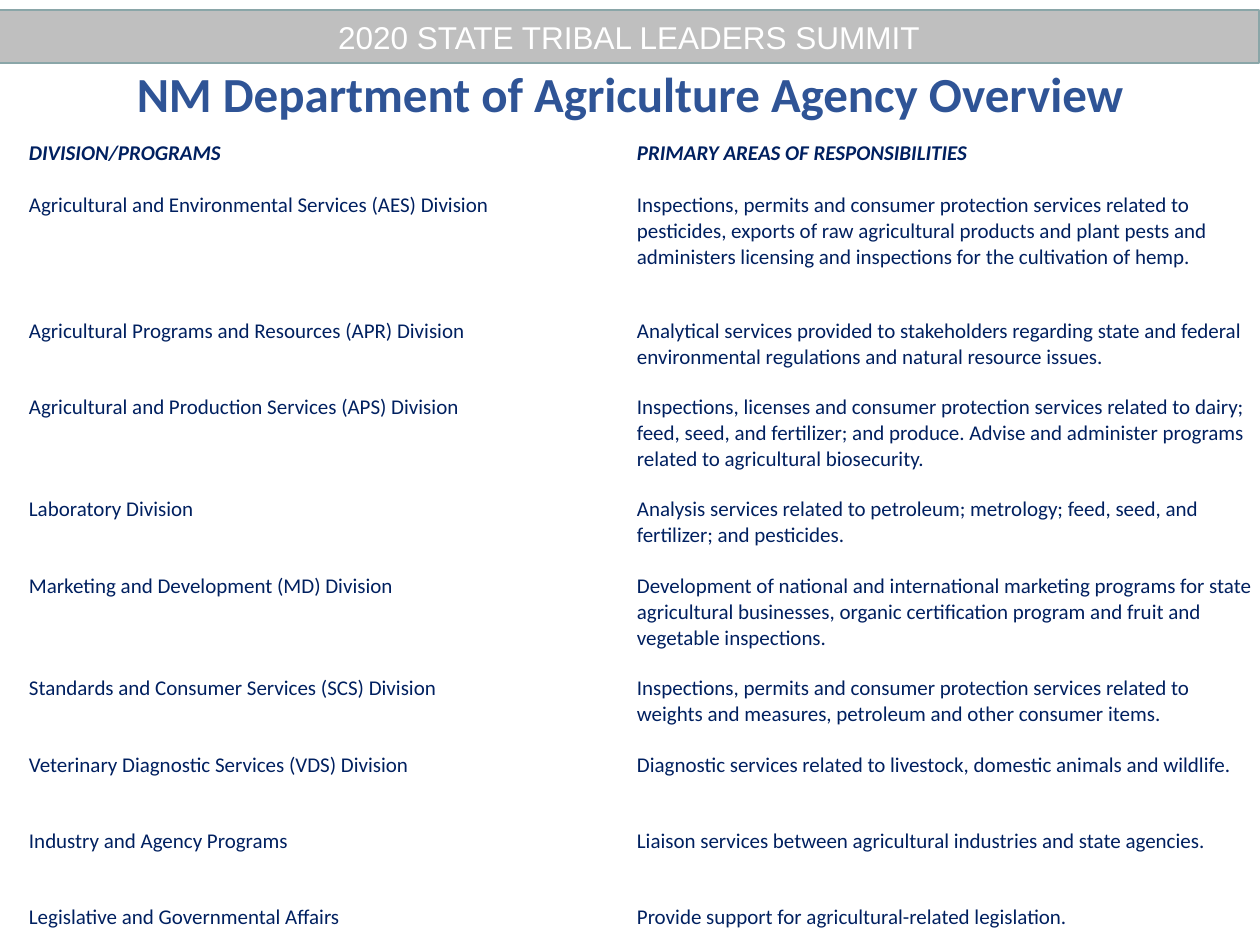
from pptx import Presentation
from pptx.dml.color import RGBColor
from pptx.enum.shapes import MSO_SHAPE
from pptx.enum.text import MSO_ANCHOR, MSO_AUTO_SIZE, PP_ALIGN
from pptx.util import Pt

PX = 914400 // 126  # EMU per pixel

NAVY = RGBColor(0x00, 0x20, 0x60)
BLUE = RGBColor(0x2F, 0x54, 0x96)
GRAY = RGBColor(0xBF, 0xBF, 0xBF)
TEAL = RGBColor(0x8A, 0xA6, 0xA8)
WHITE = RGBColor(0xFF, 0xFF, 0xFF)

# Row height in px, division, responsibilities
ROWS = [
    (52, "DIVISION/PROGRAMS", "PRIMARY AREAS OF RESPONSIBILITIES"),
    (126, "Agricultural and Environmental Services (AES) Division",
     "Inspections, permits and consumer protection services related to pesticides, "
     "exports of raw agricultural products and plant pests and administers licensing "
     "and inspections for the cultivation of hemp."),
    (76, "Agricultural Programs and Resources (APR) Division",
     "Analytical services provided to stakeholders regarding state and federal "
     "environmental regulations and natural resource issues."),
    (102, "Agricultural and Production Services (APS) Division",
     "Inspections, licenses and consumer protection services related to dairy; feed, "
     "seed, and fertilizer; and produce. Advise and administer programs related to "
     "agricultural biosecurity."),
    (77, "Laboratory Division",
     "Analysis services related to petroleum; metrology; feed, seed, and fertilizer; "
     "and pesticides."),
    (102, "Marketing and Development (MD) Division",
     "Development of national and international marketing programs for state "
     "agricultural businesses, organic certification program and fruit and vegetable "
     "inspections."),
    (77, "Standards and Consumer Services (SCS) Division",
     "Inspections, permits and consumer protection services related to weights and "
     "measures, petroleum and other consumer items."),
    (76, "Veterinary Diagnostic Services (VDS) Division",
     "Diagnostic services related to livestock, domestic animals and wildlife."),
    (76, "Industry and Agency Programs",
     "Liaison services between agricultural industries and state agencies."),
    (37, "Legislative and Governmental Affairs",
     "Provide support for agricultural-related legislation."),
]
COLUMN_WIDTHS = (608, 624)


def add_run(paragraph, text, font_name, size, color, bold=False, italic=False):
    run = paragraph.add_run()
    run.text = text
    font = run.font
    font.name, font.size, font.color.rgb = font_name, Pt(size), color
    font.bold, font.italic = bold, italic


prs = Presentation()
prs.slide_width, prs.slide_height = 1260 * PX, 945 * PX
slide = prs.slides.add_slide(prs.slide_layouts[5])

# Title
title = slide.shapes.title
title.left, title.top, title.width, title.height = 1 * PX, 57 * PX, 1258 * PX, 72 * PX
title_frame = title.text_frame
title_frame.vertical_anchor = MSO_ANCHOR.TOP
title_frame.auto_size = MSO_AUTO_SIZE.SHAPE_TO_FIT_TEXT
heading = title_frame.paragraphs[0]
heading.alignment = PP_ALIGN.CENTER
add_run(heading, "NM Department of Agriculture Agency Overview", "Calibri", 28, BLUE, bold=True)

# Division table
divisions = slide.shapes.add_table(
    len(ROWS), len(COLUMN_WIDTHS), 25 * PX, 141 * PX,
    sum(COLUMN_WIDTHS) * PX, sum(row[0] for row in ROWS) * PX).table
divisions.first_row = divisions.horz_banding = False
for column, width in zip(divisions.columns, COLUMN_WIDTHS):
    column.width = width * PX

for r, (height, *texts) in enumerate(ROWS):
    divisions.rows[r].height = height * PX
    is_header = r == 0
    for c, text in enumerate(texts):
        cell = divisions.cell(r, c)
        cell.fill.background()
        cell.margin_left = cell.margin_right = 4 * PX
        cell.margin_top = cell.margin_bottom = 0
        add_run(cell.text_frame.paragraphs[0], text, "Calibri", 12, NAVY,
                bold=is_header, italic=is_header)

# Summit banner
banner = slide.shapes.add_shape(
    MSO_SHAPE.RECTANGLE, -1 * PX, 10 * PX, 1260 * PX, 53 * PX)
banner.shadow.inherit = False
banner.fill.solid()
banner.fill.fore_color.rgb = GRAY
banner.line.color.rgb = TEAL
banner.line.width = Pt(1)
banner.text_frame.vertical_anchor = MSO_ANCHOR.MIDDLE
summit = banner.text_frame.paragraphs[0]
summit.alignment = PP_ALIGN.CENTER
add_run(summit, "2020 STATE TRIBAL LEADERS SUMMIT", "Arial", 18, WHITE)

prs.save("out.pptx")
